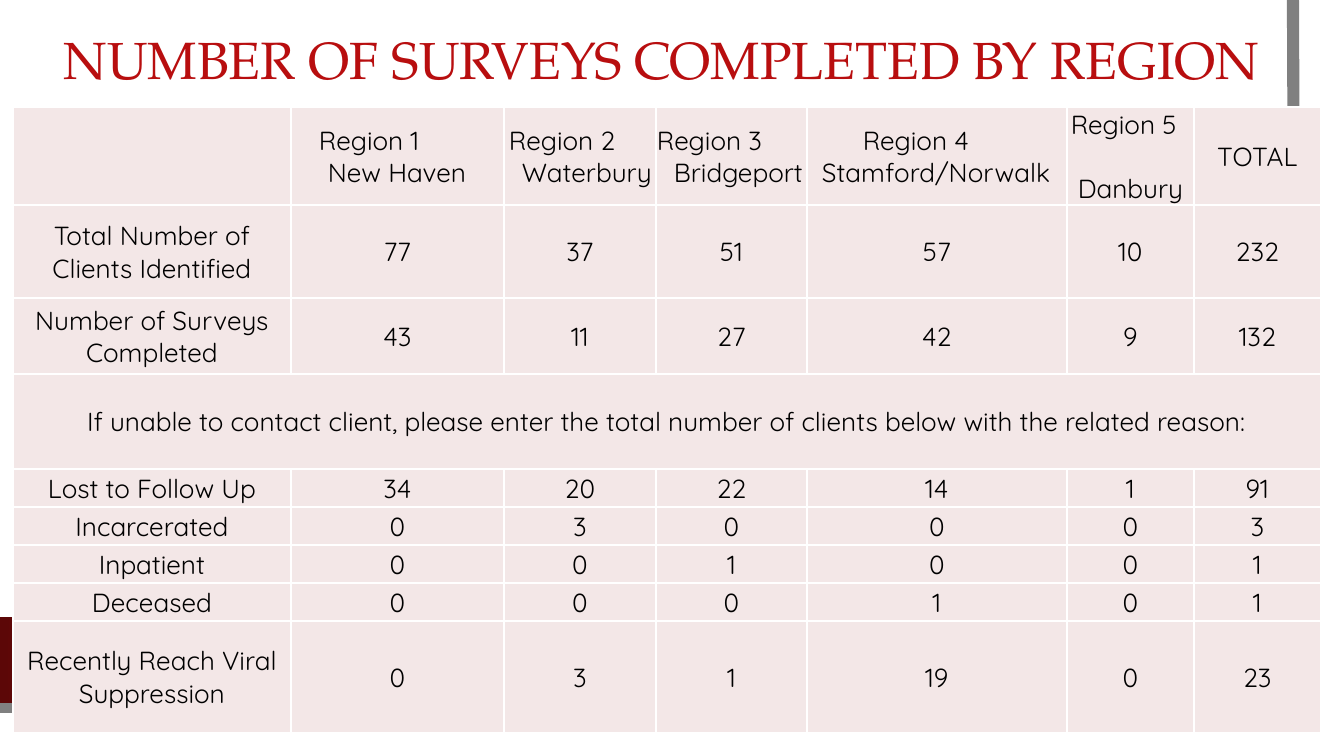
from pptx import Presentation
from pptx import util as u
from pptx.dml.color import RGBColor
from pptx.enum import shapes, text
from pptx.oxml import parse_xml
from pptx.oxml.ns import nsdecls

SCALE = 914400 / 134.4
WHITE = RGBColor(0xFF, 0xFF, 0xFF)
BLACK = RGBColor(0, 0, 0)
GRAY = RGBColor(0x80, 0x80, 0x80)
RED = RGBColor(0xB8, 0x0E, 0x0F)
DARK_RED = RGBColor(0x5C, 0x07, 0x07)
PINK = RGBColor(0xF3, 0xE7, 0xE7)

COLUMNS = [278, 213, 152, 151, 260, 127, 127]
ROWS = [98, 93, 76, 95, 38, 38, 38, 38, 112]
REGIONS = [
    ("Region 1", 27, "New Haven", 36, 0),
    ("Region 2", 4, "Waterbury", 17, 0),
    ("Region 3", 0, "Bridgeport", 17, 0),
    ("Region 4", 55, "Stamford/Norwalk", 14, 0),
    ("Region 5", 3, "Danbury", 10, 17),
]
COUNTS = {
    1: ("Total Number of Clients Identified", 77, 37, 51, 57, 10, 232),
    2: ("Number of Surveys Completed", 43, 11, 27, 42, 9, 132),
    4: ("Lost to Follow Up", 34, 20, 22, 14, 1, 91),
    5: ("Incarcerated", 0, 3, 0, 0, 0, 3),
    6: ("Inpatient", 0, 0, 1, 0, 0, 1),
    7: ("Deceased", 0, 0, 0, 1, 0, 1),
    8: ("Recently Reach Viral Suppression", 0, 3, 1, 19, 0, 23),
}
NOTE_ROW = 3
NOTE = ("If unable to contact client, please enter the total number of clients "
        "below with the related reason:")


def px(length):
    return u.Emu(round(length * SCALE))


def write(para, words, font="Quicksand", size=14, color=BLACK, indent=None,
          before=0, spacing=None):
    para.alignment = text.PP_ALIGN.CENTER
    if indent is not None:
        para.alignment = text.PP_ALIGN.LEFT
        para._p.get_or_add_pPr().set("marL", str(px(indent)))
    if before:
        para.space_before = u.Pt(before)
    if spacing:
        para.line_spacing = spacing
    span = para.add_run()
    span.text = words
    span.font.name = font
    span.font.size = u.Pt(size)
    span.font.color.rgb = color


def add_box(page, left, top, width, height):
    box = page.shapes.add_shape(shapes.MSO_SHAPE.RECTANGLE, px(left), px(top),
                                px(width), px(height))
    box.shadow.inherit = False
    box.line.fill.background()
    return box


def add_frame(page):
    panel = add_box(page, 0, 0, 1321, 732)
    panel.fill.solid()
    panel.fill.fore_color.rgb = WHITE

    builder = page.shapes.build_freeform(1293, 0, scale=SCALE)
    builder.add_line_segments([(1296, 708), (-3, 707)], close=False)
    edge = builder.convert_to_shape()
    edge.shadow.inherit = False
    edge.fill.background()
    edge.line.color.rgb = GRAY
    edge.line.width = u.Pt(6.5)

    band = add_box(page, 0, 617, 1290, 86)
    band.fill.gradient()
    for stop, color, position in zip(band.fill.gradient_stops,
                                     (RED, DARK_RED), (0.34, 1)):
        stop.color.rgb = color
        stop.position = position
    linear = band._element.spPr.find(".//{*}lin")
    linear.getparent().replace(linear, parse_xml(
        f'<a:path {nsdecls("a")} path="circle">'
        '<a:fillToRect l="50000" t="50000" r="50000" b="50000"/></a:path>'))


def add_title(page, words):
    title = page.shapes.title
    page.shapes._spTree.append(title._element)
    title.left, title.top = px(23), px(0)
    title.width, title.height = px(1277), px(126)
    title.text_frame.vertical_anchor = text.MSO_ANCHOR.MIDDLE
    write(title.text_frame.paragraphs[0], words, font="TeX Gyre Pagella",
          size=28, color=RED, spacing=0.9)


def format_cell(cell):
    cell.margin_left = cell.margin_right = cell.margin_top = px(1)
    cell.margin_bottom = 0
    cell.vertical_anchor = text.MSO_ANCHOR.MIDDLE
    for side in "LRTB":
        cell._tc.get_or_add_tcPr().append(parse_xml(
            f'<a:ln{side} {nsdecls("a")} w="12700"><a:solidFill>'
            f'<a:srgbClr val="{WHITE}"/></a:solidFill></a:ln{side}>'))
    cell.fill.solid()
    cell.fill.fore_color.rgb = PINK


def write_region(cell, region, region_indent, city, city_indent, gap):
    write(cell.text_frame.paragraphs[0], region, indent=region_indent)
    write(cell.text_frame.add_paragraph(), city, indent=city_indent, before=gap)


def add_survey_table(page):
    table = page.shapes.add_table(len(ROWS), len(COLUMNS), px(13), px(107),
                                  px(sum(COLUMNS)), px(sum(ROWS))).table
    for column, width in zip(table.columns, COLUMNS):
        column.width = px(width)
    for row, height in zip(table.rows, ROWS):
        row.height = px(height)
    for cell in table.iter_cells():
        format_cell(cell)

    for index, region in enumerate(REGIONS, 1):
        write_region(table.cell(0, index), *region)
    last = len(COLUMNS) - 1
    write(table.cell(0, last).text_frame.paragraphs[0], "TOTAL")

    note = table.cell(NOTE_ROW, 0)
    note.merge(table.cell(NOTE_ROW, last))
    write(note.text_frame.paragraphs[0], NOTE)

    for row, values in COUNTS.items():
        for column, value in enumerate(values):
            write(table.cell(row, column).text_frame.paragraphs[0], str(value))


def main():
    deck = Presentation()
    deck.slide_width, deck.slide_height = px(1344), px(756)
    page = deck.slides.add_slide(deck.slide_layouts[5])
    add_frame(page)
    add_title(page, "NUMBER OF SURVEYS COMPLETED BY REGION")
    add_survey_table(page)
    deck.save("out.pptx")


if __name__ == "__main__":
    main()
